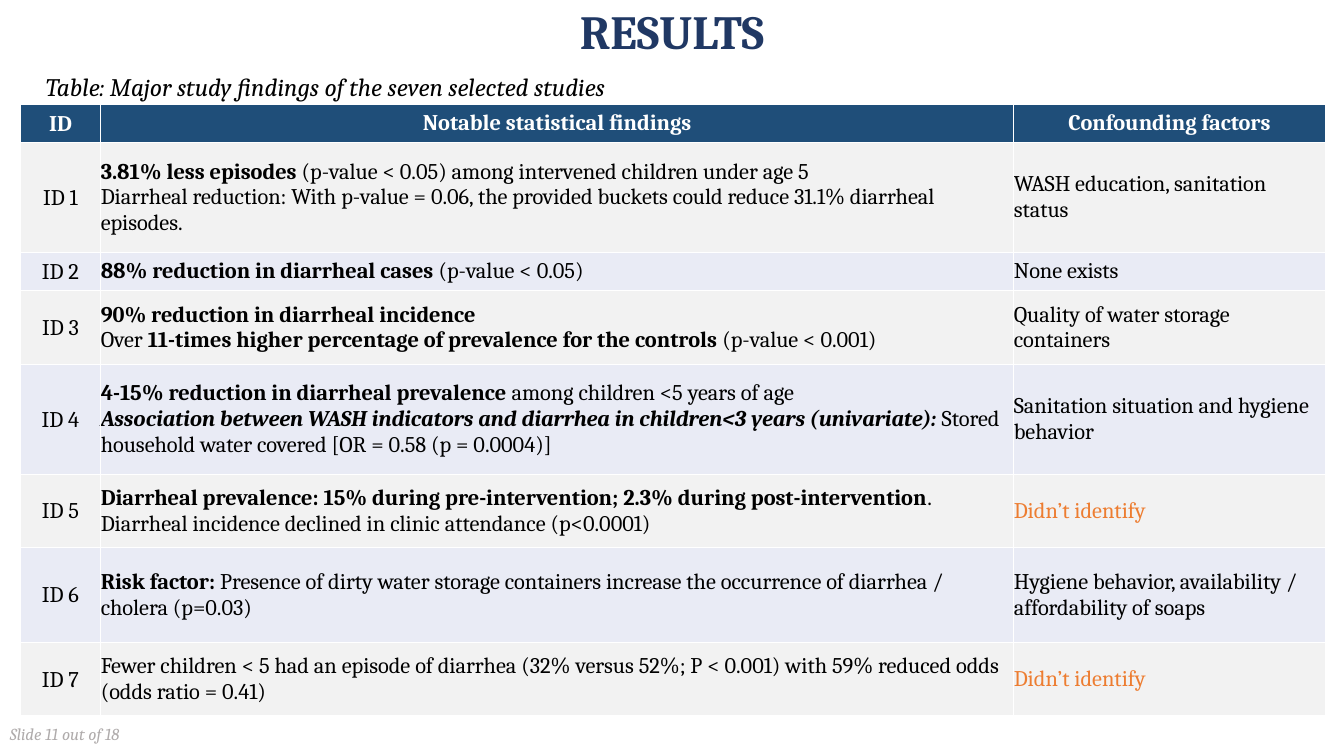
from lxml.etree import SubElement
from pptx import Presentation
from pptx.dml.color import RGBColor
from pptx.enum.text import MSO_ANCHOR as ANCHOR, PP_ALIGN as ALIGN
from pptx.oxml.ns import qn
from pptx.util import Cm, Pt

FONT = "Cambria"
NAVY = RGBColor(0x20, 0x38, 0x64)
HEADER_BLUE = RGBColor(0x1F, 0x4E, 0x79)
LIGHT_GRAY = RGBColor(0xF2, 0xF2, 0xF2)
PALE_BLUE = RGBColor(0xE9, 0xEB, 0xF5)
FOOTER_GRAY = RGBColor(0xAF, 0xAB, 0xAB)
ORANGE = RGBColor(0xED, 0x7D, 0x31)
BLACK = RGBColor(0, 0, 0)
WHITE = RGBColor(255, 255, 255)

TITLE = "RESULTS"
CAPTION = "Table: Major study findings of the seven selected studies"
FOOTER = "Slide 11 out of 18"
HEADERS = ("ID", "Notable statistical findings", "Confounding factors")
NOT_FOUND = "Didn’t identify"
COL_WIDTHS = (2.03, 23.01, 7.85)
HEADER_HEIGHT = 0.97

# Row height, findings as paragraphs of (text, style) runs, confounding factors
STUDIES = [
    (2.77, [[("3.81% less episodes ", "b"),
             ("(p-value < 0.05) among intervened children under age 5", "")],
            [("Diarrheal reduction: With p-value = 0.06, the provided buckets "
              "could reduce 31.1% diarrheal episodes.", "")]],
     "WASH education, sanitation status"),
    (0.97, [[("88% reduction in diarrheal cases ", "b"), ("(p-value < 0.05)", "")]],
     "None exists"),
    (1.85, [[("90% reduction in diarrheal incidence \n", "b"), ("Over ", ""),
             ("11-times higher percentage of prevalence for the controls ", "b"),
             ("(p-value < 0.001)", "")]],
     "Quality of water storage containers"),
    (2.77, [[("4-15% reduction in diarrheal prevalence ", "b"),
             ("among children <5 years of age\n", ""),
             ("Association between WASH indicators and diarrhea in "
              "children<3 years (univariate): ", "bi"),
             ("Stored household water covered [OR = 0.58 (p = 0.0004)]", "")]],
     "Sanitation situation and hygiene behavior"),
    (1.85, [[("Diarrheal prevalence: 15% during pre-intervention; "
              "2.3% during post-intervention", "b"),
             (".\nDiarrheal incidence declined in clinic attendance (p<0.0001)", "")]],
     NOT_FOUND),
    (1.85 + 0.54, [[("Risk factor: ", "b"),
                    ("Presence of dirty water storage containers increase the "
                     "occurrence of diarrhea / cholera (p=0.03)", "")]],
     "Hygiene behavior, availability / affordability of soaps"),
    (1.85, [[("Fewer children < 5 had an episode of diarrhea (32% versus 52%; "
              "P < 0.001) with 59% reduced odds (odds ratio = 0.41)", "")]],
     NOT_FOUND),
]


def write(tf, content, size=16, color=BLACK, style="", align=ALIGN.LEFT,
          spacing=None, before=None):
    """Fill a text frame from a string or from paragraphs of (text, style) runs."""
    paragraphs = [[(content, style)]] if isinstance(content, str) else content
    for i, runs in enumerate(paragraphs):
        p = tf.add_paragraph() if i else tf.paragraphs[0]
        p.alignment, p.line_spacing, p.space_before = align, spacing, before
        for text, marks in runs:
            for j, line in enumerate(text.split("\n")):
                if j:
                    p.add_line_break()
                if line:
                    r = p.add_run()
                    r.text = line
                    r.font.name, r.font.size = FONT, Pt(size)
                    r.font.bold, r.font.italic = "b" in marks, "i" in marks
                    r.font.color.rgb = color


def add_label(slide, text, left, top, width, height, anchor=ANCHOR.TOP, **fmt):
    tf = slide.shapes.add_textbox(Cm(left), Cm(top), Cm(width), Cm(height)).text_frame
    tf.word_wrap = True
    tf.vertical_anchor = anchor
    write(tf, text, **fmt)


def style_cell(cell, fill, inset):
    cell.vertical_anchor = ANCHOR.MIDDLE
    cell.margin_left = cell.margin_right = cell.margin_top = Cm(inset)
    cell.margin_bottom = 0
    tc_pr = cell._tc.get_or_add_tcPr()
    for side in ("lnL", "lnR", "lnT", "lnB"):
        ln = SubElement(tc_pr, qn(f"a:{side}"), w=str(Pt(1)))
        SubElement(SubElement(ln, qn("a:solidFill")), qn("a:srgbClr"), val=str(WHITE))
    cell.fill.solid()
    cell.fill.fore_color.rgb = fill


def add_findings_table(slide):
    heights = [HEADER_HEIGHT] + [study[0] for study in STUDIES]
    rows = [HEADERS] + [(f"ID {n}", findings, factors)
                        for n, (_, findings, factors) in enumerate(STUDIES, 1)]
    table = slide.shapes.add_table(len(rows), len(HEADERS), Cm(0.51), Cm(2.62),
                                   Cm(sum(COL_WIDTHS)), Cm(sum(heights))).table
    for column, width in zip(table.columns, COL_WIDTHS):
        column.width = Cm(width)
    for i, (height, contents) in enumerate(zip(heights, rows)):
        table.rows[i].height = Cm(height)
        fill = HEADER_BLUE if i == 0 else LIGHT_GRAY if i % 2 else PALE_BLUE
        for j, content in enumerate(contents):
            cell = table.cell(i, j)
            style_cell(cell, fill, 0 if j else 0.03)
            color = WHITE if i == 0 else ORANGE if content == NOT_FOUND else BLACK
            write(cell.text_frame, content, color=color, style="" if i else "b",
                  align=ALIGN.CENTER if i == 0 or j == 0 else ALIGN.LEFT)


def main():
    prs = Presentation()
    prs.slide_width, prs.slide_height = Cm(33.87), Cm(19.05)
    slide = prs.slides.add_slide(prs.slide_layouts[5])

    title = slide.shapes.title
    title.left, title.top, title.width, title.height = 0, Cm(-0.03), Cm(33.87), Cm(1.78)
    title.text_frame.vertical_anchor = ANCHOR.MIDDLE
    write(title.text_frame, TITLE, size=34, color=NAVY, style="b",
          align=ALIGN.CENTER, spacing=0.9)

    add_findings_table(slide)
    add_label(slide, CAPTION, 0.91, 1.75, 17.88, 1.68, size=18, style="i",
              spacing=0.9, before=Pt(10))
    add_label(slide, FOOTER, 0, 17.98, 7.62, 1.02, anchor=ANCHOR.MIDDLE,
              size=12, color=FOOTER_GRAY, style="i")
    prs.save("out.pptx")


if __name__ == "__main__":
    main()
